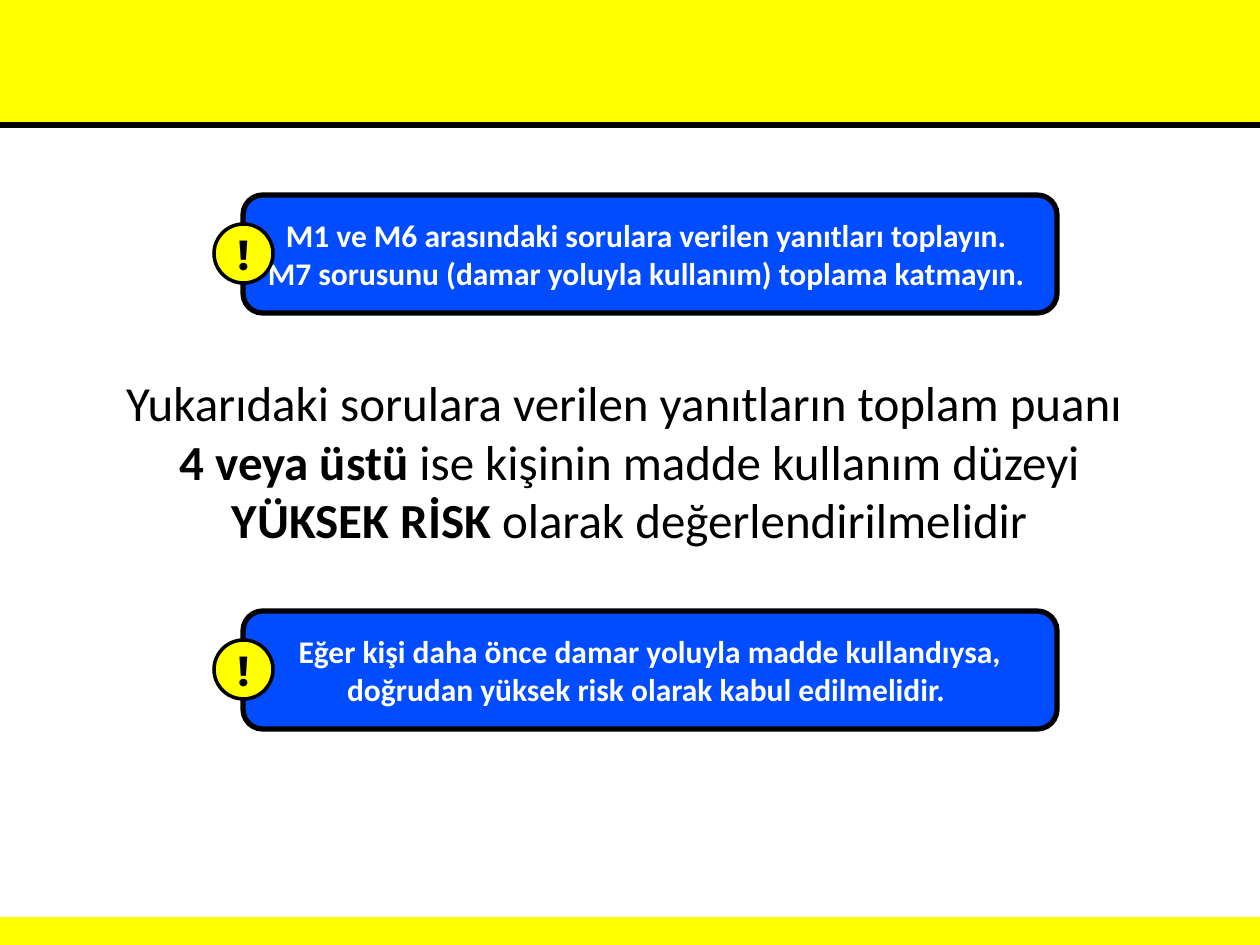
from dataclasses import dataclass

from lxml.etree import SubElement
from pptx import Presentation
from pptx.dml.color import RGBColor as Color
from pptx.enum.shapes import MSO_CONNECTOR as Connector, MSO_SHAPE as Preset
from pptx.enum.text import MSO_ANCHOR as Anchor, PP_ALIGN as Align
from pptx.oxml.ns import qn
from pptx.util import Pt

EMU_PER_PX = 914400 / 126


@dataclass(frozen=True)
class Theme:
    yellow: Color = Color(0xFF, 0xFF, 0x00)
    blue: Color = Color(0x01, 0x4C, 0xFF)
    black: Color = Color(0x00, 0x00, 0x00)
    white: Color = Color(0xFF, 0xFF, 0xFF)
    body_font: str = "Calibri"
    badge_font: str = "Montserrat"
    statement_size: int = 28
    notice_size: int = 18
    badge_size: int = 24
    thick: int = 3
    thin: int = 2


THEME = Theme()


def px(*lengths):
    return [round(length * EMU_PER_PX) for length in lengths]


def set_values(target, values):
    for name, value in values.items():
        setattr(target, name, value)


def add_run(paragraph, text, color, font):
    run = paragraph.add_run()
    run.text = text
    set_values(run.font, font)
    run.font.color.rgb = color


def prepare_frame(shape):
    frame = shape.text_frame
    set_values(frame, {"word_wrap": True, "vertical_anchor": Anchor.MIDDLE})
    return frame


def draw_shape(slide, preset, box, fill, line, width):
    shape = slide.shapes.add_shape(preset, *px(*box))
    shape.shadow.inherit = False
    shape.fill.solid()
    shape.fill.fore_color.rgb = fill
    shape.line.color.rgb = line
    shape.line.width = Pt(width)
    return shape


def write_lines(shape, lines, color, font):
    frame = prepare_frame(shape)
    for index, text in enumerate(lines):
        paragraph = frame.add_paragraph() if index else frame.paragraphs[0]
        paragraph.alignment = Align.CENTER
        add_run(paragraph, text, color, font)


def draw_bands(slide, box, header_height, footer_height):
    left, top, width, height = box
    rule_y = top + header_height
    footer_top = top + height - footer_height
    for band_top, band_height in ((top, header_height), (footer_top, footer_height)):
        draw_shape(slide, Preset.RECTANGLE, (left, band_top, width, band_height),
                   THEME.yellow, THEME.yellow, THEME.thin)
    rule = slide.shapes.add_connector(
        Connector.STRAIGHT, *px(left, rule_y, left + width, rule_y))
    rule.line.color.rgb = THEME.black
    rule.line.width = Pt(THEME.thick)
    SubElement(rule._element.spPr, qn("a:effectLst"))


def draw_statement(slide, box, lines):
    frame = prepare_frame(slide.shapes.add_textbox(*px(*box)))
    paragraph = frame.paragraphs[0]
    paragraph.alignment = Align.CENTER
    for index, parts in enumerate(lines):
        if index:
            paragraph.add_line_break()
        for text, bold in parts:
            add_run(paragraph, text, THEME.black,
                    {"name": THEME.body_font, "size": Pt(THEME.statement_size), "bold": bold})


def draw_notice(slide, box, lines):
    left, top, width, height = box
    panel = draw_shape(slide, Preset.ROUNDED_RECTANGLE, box,
                       THEME.blue, THEME.black, THEME.thick)
    write_lines(panel, lines, THEME.white,
                {"name": THEME.body_font, "size": Pt(THEME.notice_size), "bold": True})
    diameter = height // 2
    badge_box = (left - diameter // 2, top + (height - diameter) // 2, diameter, diameter)
    badge = draw_shape(slide, Preset.OVAL, badge_box,
                       THEME.yellow, THEME.black, THEME.thin)
    write_lines(badge, ["!"], THEME.black,
                {"name": THEME.badge_font, "size": Pt(THEME.badge_size), "bold": True})


def main():
    presentation = Presentation()
    slide_width, slide_height = 1260, 945
    width, height = px(slide_width, slide_height)
    set_values(presentation, {"slide_width": width, "slide_height": height})
    slide = presentation.slides.add_slide(presentation.slide_layouts[6])

    draw_bands(slide, (0, 0, slide_width, slide_height), 125, 26)
    draw_statement(slide, (94, 359, 1071, 203), [
        [("Yukarıdaki sorulara verilen yanıtların toplam puanı ", False)],
        [("4 veya üstü ", True), ("ise kişinin madde kullanım düzeyi ", False),
         ("YÜKSEK RİSK ", True), ("olarak değerlendirilmelidir", False)],
    ])
    draw_notice(slide, (243, 611, 814, 118), [
        "Eğer kişi daha önce damar yoluyla madde kullandıysa, "
        "doğrudan yüksek risk olarak kabul edilmelidir. ",
    ])
    draw_notice(slide, (243, 195, 814, 118), [
        "M1 ve M6 arasındaki sorulara verilen yanıtları toplayın. ",
        "M7 sorusunu (damar yoluyla kullanım) toplama katmayın. ",
    ])
    presentation.save("out.pptx")


if __name__ == "__main__":
    main()
